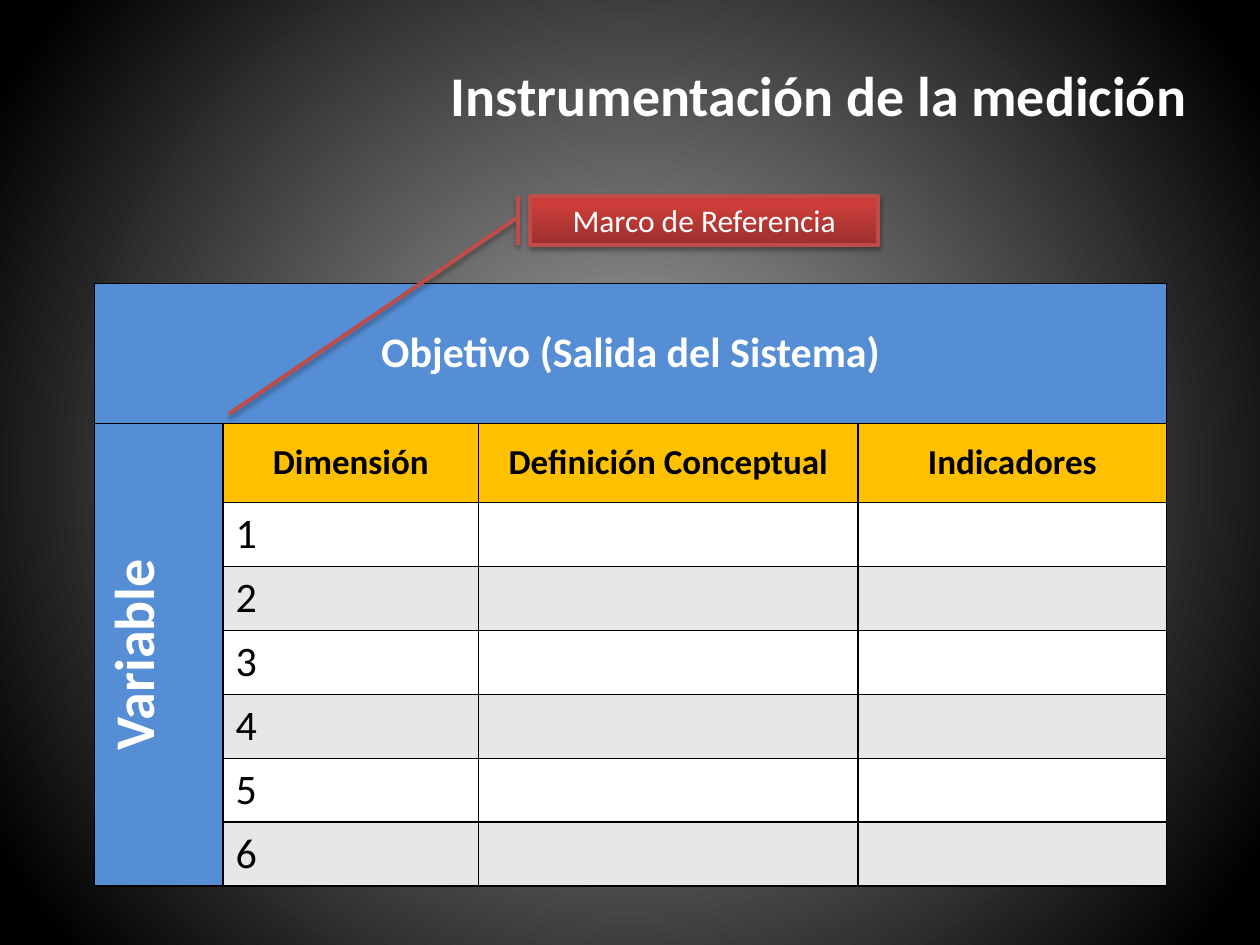
from lxml.etree import SubElement
from pptx import Presentation
from pptx.dml.color import RGBColor
from pptx.enum.shapes import MSO_SHAPE
from pptx.enum.text import MSO_ANCHOR, PP_ALIGN
from pptx.oxml import parse_xml
from pptx.oxml.ns import nsdecls, qn
from pptx.util import Inches, Pt

WHITE = RGBColor(0xFF, 0xFF, 0xFF)
BLACK = RGBColor(0x00, 0x00, 0x00)
BLUE = RGBColor(0x55, 0x8E, 0xD5)
AMBER = RGBColor(0xFF, 0xC0, 0x00)
BAND = RGBColor(0xE7, 0xE7, 0xE7)
SILVER = RGBColor(0xA6, 0xA6, 0xA6)
RED_LINE = RGBColor(0xBF, 0x4C, 0x48)
RED_DARK = RGBColor(0x9C, 0x2F, 0x2D)
RED_MID = RGBColor(0xCB, 0x3E, 0x3A)
RED_LIGHT = RGBColor(0xCE, 0x3B, 0x37)

WIDTH, HEIGHT = Inches(10), Inches(7.5)


def write(frame, text, align=PP_ALIGN.CENTER, **font_format):
    frame.text = text
    paragraph = frame.paragraphs[0]
    paragraph.alignment = align
    font = paragraph.runs[0].font
    font.name = "Calibri"
    font.color.rgb = font_format.pop("color")
    for attribute, value in font_format.items():
        setattr(font, attribute, value)


def shade(fill, parent, stops, direction):
    fill.solid()
    solid = parent.find(qn("a:solidFill"))
    marks = "".join(
        f'<a:gs pos="{share * 1000}"><a:srgbClr val="{color}"/></a:gs>'
        for share, color in stops
    )
    parent.replace(solid, parse_xml(
        f'<a:gradFill {nsdecls("a")} rotWithShape="1">'
        f"<a:gsLst>{marks}</a:gsLst>{direction}</a:gradFill>"
    ))


presentation = Presentation()
presentation.slide_width, presentation.slide_height = WIDTH, HEIGHT
slide = presentation.slides.add_slide(presentation.slide_layouts[5])

backdrop = slide.background.fill
backdrop.solid()
shade(
    backdrop,
    slide.element.find(".//" + qn("p:bgPr")),
    [(2, SILVER), (94, BLACK)],
    '<a:path path="circle"><a:fillToRect l="50000" t="50000" r="50000" b="50000"/></a:path>',
)

heading = slide.shapes.title
heading.left, heading.top = int(WIDTH * 0.335), int(HEIGHT * 0.05)
heading.width, heading.height = int(WIDTH * 0.63), int(HEIGHT * 0.1)
heading.text_frame.vertical_anchor = MSO_ANCHOR.MIDDLE
write(heading.text_frame, "Instrumentación de la medición", size=Pt(32), bold=True, color=WHITE)

column_shares = [0.102, 0.203, 0.301, 0.245]
row_heights = [Inches(1.11), Inches(0.63)] + [Inches(0.5)] * 6
measurement = slide.shapes.add_table(
    len(row_heights), len(column_shares),
    int(WIDTH * 0.075), int(HEIGHT * 0.3),
    int(WIDTH * sum(column_shares)), sum(row_heights),
).table
for column, share in zip(measurement.columns, column_shares):
    column.width = int(WIDTH * share)
for row, height in zip(measurement.rows, row_heights):
    row.height = height

for row_index, row in enumerate(measurement.rows):
    for column_index, cell in enumerate(row.cells):
        properties = cell._tc.get_or_add_tcPr()
        for side in ("lnL", "lnR", "lnT", "lnB"):
            border = SubElement(properties, qn(f"a:{side}"), w=str(Pt(1)))
            ink = SubElement(border, qn("a:solidFill"))
            SubElement(ink, qn("a:srgbClr"), val=str(BLACK))
        cell.fill.solid()
        if row_index == 0 or column_index == 0:
            cell.fill.fore_color.rgb = BLUE
        elif row_index == 1:
            cell.fill.fore_color.rgb = AMBER
        else:
            cell.fill.fore_color.rgb = BAND if row_index % 2 else WHITE

objective = measurement.cell(0, 0)
objective.merge(measurement.cell(0, len(column_shares) - 1))
variable = measurement.cell(1, 0)
variable.merge(measurement.cell(len(row_heights) - 1, 0))
variable._tc.get_or_add_tcPr().set("vert", "vert270")

labels = [
    (objective, "Objetivo (Salida del Sistema)", 24, WHITE),
    (variable, "Variable", 32, WHITE),
]
for column_index, label in enumerate(["Dimensión", "Definición Conceptual", "Indicadores"], 1):
    labels.append((measurement.cell(1, column_index), label, 20, BLACK))
for cell, label, size, color in labels:
    cell.vertical_anchor = MSO_ANCHOR.MIDDLE
    write(cell.text_frame, label, size=Pt(size), bold=True, color=color)
for dimension in range(1, 7):
    write(measurement.cell(dimension + 1, 1).text_frame, str(dimension),
          PP_ALIGN.LEFT, size=Pt(24), bold=False, color=BLACK)

reference = slide.shapes.add_shape(
    MSO_SHAPE.LINE_CALLOUT_1_BORDER_AND_ACCENT_BAR,
    int(WIDTH * 0.421), int(HEIGHT * 0.207), int(WIDTH * 0.276), int(HEIGHT * 0.052),
)
for index, share in enumerate([0.445, -0.037, 4.441, -0.867]):
    reference.adjustments[index] = share
reference.line.color.rgb = RED_LINE
reference.line.width = Pt(2.25)
shade(
    reference.fill,
    reference.element.spPr,
    [(0, RED_DARK), (80, RED_MID), (100, RED_LIGHT)],
    '<a:lin ang="16200000" scaled="0"/>',
)
reference.shadow.inherit = False
reference.element.spPr.find(qn("a:effectLst")).append(parse_xml(
    f'<a:outerShdw {nsdecls("a")} blurRad="{Pt(3.1)}" dist="{Pt(1.8)}" dir="5400000" rotWithShape="0">'
    f'<a:srgbClr val="{BLACK}"><a:alpha val="35000"/></a:srgbClr></a:outerShdw>'
))
reference.text_frame.vertical_anchor = MSO_ANCHOR.MIDDLE
write(reference.text_frame, "Marco de Referencia", size=Pt(18), color=WHITE)

presentation.save("out.pptx")
